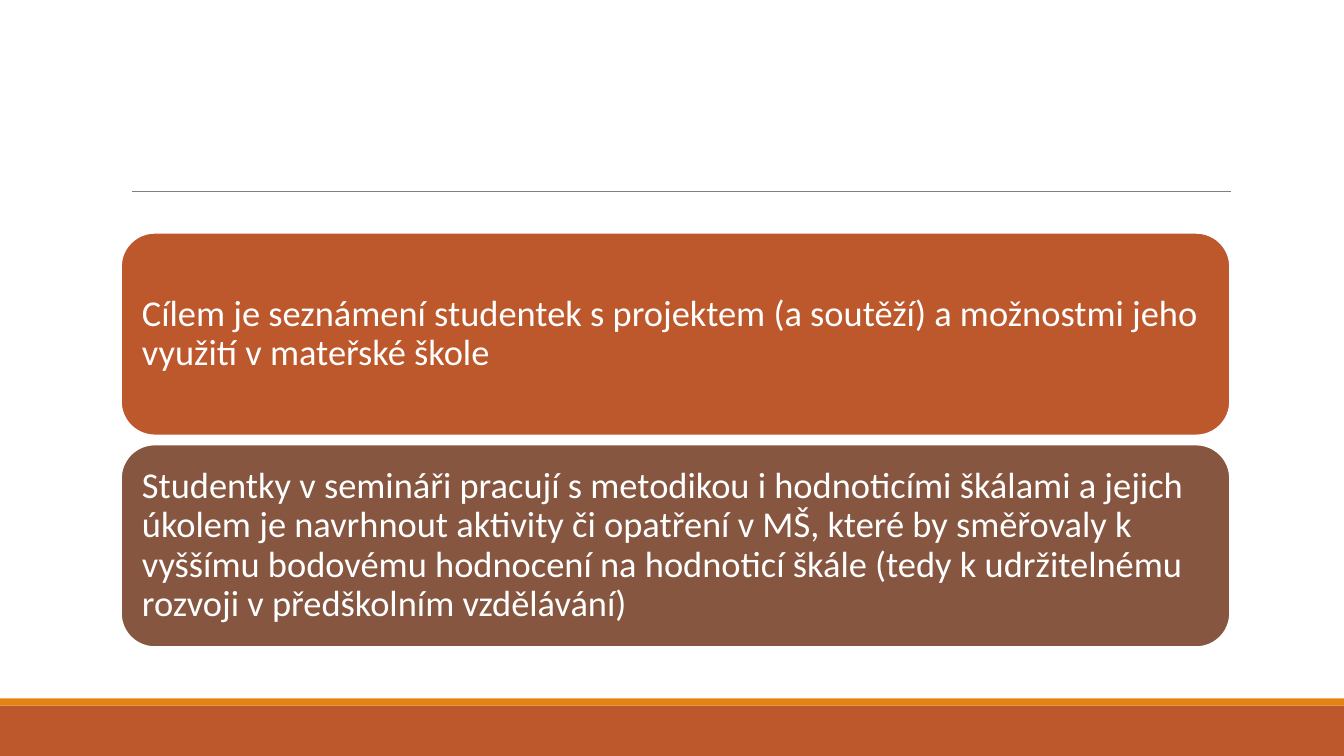
"""Build a slide with two stacked statement cards above a footer band."""
from pptx import Presentation
from pptx import util as u
from pptx.dml.color import RGBColor
from pptx.enum import shapes, text
from pptx.oxml.ns import qn
from lxml import etree

COLORS = {"rust": "BD582C", "orange": "E48312", "brown": "865640",
          "gray": "808080", "white": "FFFFFF"}
CARDS = [
    ("rust", "Cílem je seznámení studentek s projektem (a soutěží) a možnostmi "
             "jeho využití v mateřské škole"),
    ("brown", "Studentky v semináři pracují s metodikou i hodnoticími škálami a "
              "jejich úkolem je navrhnout aktivity či opatření v MŠ, které by "
              "směřovaly k vyššímu bodovému hodnocení na hodnoticí škále (tedy k "
              "udržitelnému rozvoji v předškolním vzdělávání)"),
]
BANDS = [("rust", 7, 0.5), ("orange", 6.93, 0.07)]
SLIDE_WIDTH, SLIDE_HEIGHT = 13.33, 7.5
CARD_LEFT, CARD_TOP, CARD_WIDTH, CARD_HEIGHT, CARD_PITCH = 1.2, 2.31, 11, 2.01, 2.1
RULE_LEFT, RULE_RIGHT, RULE_TOP = 1.31, 12.21, 1.9
INSET = u.Inches(0.11)
FRAME_FORMAT = {"word_wrap": True, "vertical_anchor": text.MSO_ANCHOR.MIDDLE,
                "margin_left": INSET, "margin_right": INSET,
                "margin_top": INSET, "margin_bottom": INSET}
PARAGRAPH_FORMAT = {"alignment": text.PP_ALIGN.LEFT, "line_spacing": 0.9}
FONT_FORMAT = {"name": "Calibri", "size": u.Pt(26)}


def apply(target, values):
    for name, value in values.items():
        setattr(target, name, value)


def color(name):
    return RGBColor.from_string(COLORS[name])


def add_block(slide, kind, fill, *box):
    shape = slide.shapes.add_shape(kind, *map(u.Inches, box))
    shape.shadow.inherit = False
    shape.fill.solid()
    shape.fill.fore_color.rgb = color(fill)
    shape.line.fill.background()
    return shape


def add_rule(slide):
    rule = slide.shapes.add_connector(
        shapes.MSO_CONNECTOR.STRAIGHT,
        *map(u.Inches, (RULE_LEFT, RULE_TOP, RULE_RIGHT, RULE_TOP)))
    rule.line.color.rgb = color("gray")
    rule.line.width = u.Pt(0.5)
    etree.SubElement(rule._element.spPr, qn("a:effectLst"))


def add_card(slide, index, fill, statement):
    card = add_block(slide, shapes.MSO_SHAPE.ROUNDED_RECTANGLE, fill, CARD_LEFT,
                     CARD_TOP + index * CARD_PITCH, CARD_WIDTH, CARD_HEIGHT)
    card.line.color.rgb = color("white")
    card.line.width = u.Pt(1.25)
    apply(card.text_frame, FRAME_FORMAT)
    paragraph = card.text_frame.paragraphs[0]
    apply(paragraph, PARAGRAPH_FORMAT)
    run = paragraph.add_run()
    run.text = statement
    apply(run.font, FONT_FORMAT)
    run.font.color.rgb = color("white")


def main():
    presentation = Presentation()
    presentation.slide_width = u.Inches(SLIDE_WIDTH)
    presentation.slide_height = u.Inches(SLIDE_HEIGHT)
    slide = presentation.slides.add_slide(presentation.slide_layouts.get_by_name("Blank"))
    for fill, top, height in BANDS:
        add_block(slide, shapes.MSO_SHAPE.RECTANGLE, fill, 0, top, SLIDE_WIDTH, height)
    add_rule(slide)
    for index, (fill, statement) in enumerate(CARDS):
        add_card(slide, index, fill, statement)
    presentation.save("out.pptx")


if __name__ == "__main__":
    main()
